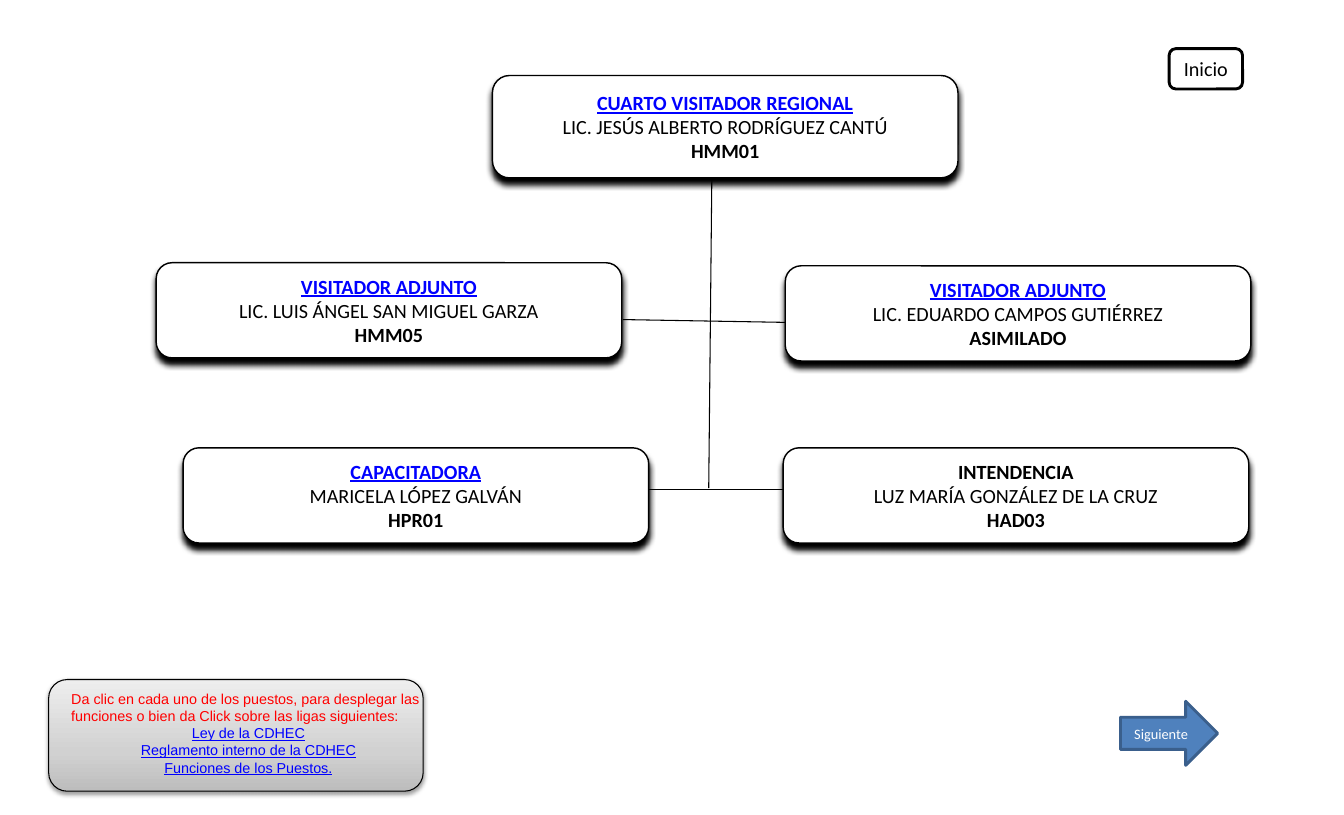
import copy

import pptx
import pptx.dml.color
import pptx.enum.shapes
import pptx.enum.text
import pptx.oxml.ns
import pptx.util
from lxml import etree

Inches = pptx.util.Inches
Pt = pptx.util.Pt
RGBColor = pptx.dml.color.RGBColor
SHAPE = pptx.enum.shapes.MSO_SHAPE
ALIGN = pptx.enum.text.PP_ALIGN
qn = pptx.oxml.ns.qn

BLACK = RGBColor(0x00, 0x00, 0x00)
WHITE = RGBColor(0xFF, 0xFF, 0xFF)
LINK_BLUE = RGBColor(0x00, 0x00, 0xFF)
RED = RGBColor(0xFF, 0x00, 0x00)
ARROW_BLUE = RGBColor(0x4F, 0x81, 0xBD)
ARROW_EDGE = RGBColor(0x3A, 0x5F, 0x8C)
GREYS = [(0, RGBColor(0xBD, 0xBD, 0xBD)),
         (0.35, RGBColor(0xD1, 0xD1, 0xD1)),
         (1, RGBColor(0xEE, 0xEE, 0xEE))]

CARD_WIDTH = 4.5


class OrgChart:
    def __init__(self, slide):
        self.shapes = slide.shapes

    def block(self, preset, left, top, width, height, edge, edge_width, fill=None):
        block = self.shapes.add_shape(
            preset, Inches(left), Inches(top), Inches(width), Inches(height))
        block.shadow.inherit = False
        block.line.color.rgb = edge
        block.line.width = Pt(edge_width)
        if fill is not None:
            block.fill.solid()
            block.fill.fore_color.rgb = fill
        block.text_frame.vertical_anchor = pptx.enum.text.MSO_ANCHOR.MIDDLE
        return block

    def drop_shadow(self, block, blur, distance, opacity):
        """Cast a black shadow straight down; lengths in points, opacity in percent."""
        effects = block._element.spPr.find(qn("a:effectLst"))
        shadow = etree.SubElement(
            effects, qn("a:outerShdw"), blurRad=str(Pt(blur)), dist=str(Pt(distance)),
            dir="5400000", algn="ctr", rotWithShape="0")
        black = etree.SubElement(shadow, qn("a:srgbClr"), val=str(BLACK))
        etree.SubElement(black, qn("a:alpha"), val=str(opacity * 1000))

    def text_line(self, paragraph, words, size, color, font="Calibri",
                  bold=False, underline=False, align=ALIGN.CENTER):
        paragraph.text = words
        paragraph.alignment = align
        paragraph.font.name = font
        paragraph.font.size = Pt(size)
        paragraph.font.color.rgb = color
        paragraph.font.bold = bold
        paragraph.font.underline = underline

    def card(self, left, top, height, post, person, code, linked=True):
        card = self.block(SHAPE.ROUNDED_RECTANGLE, left, top, CARD_WIDTH, height,
                          BLACK, 1, WHITE)
        self.drop_shadow(card, 4, 4, 100)
        frame = card.text_frame
        frame.word_wrap = False
        frame.margin_left = frame.margin_right = Inches(0.17)
        frame.margin_top = frame.margin_bottom = Inches(0.09)
        self.text_line(frame.paragraphs[0], post, 14, LINK_BLUE if linked else BLACK,
                       bold=True, underline=linked)
        self.text_line(frame.add_paragraph(), person, 14, BLACK)
        self.text_line(frame.add_paragraph(), code, 14, BLACK, bold=True)

    def branch(self, x1, y1, x2, y2):
        branch = self.shapes.add_connector(
            pptx.enum.shapes.MSO_CONNECTOR.STRAIGHT,
            Inches(x1), Inches(y1), Inches(x2), Inches(y2))
        branch.line.color.rgb = BLACK
        branch.line.width = Pt(0.75)
        etree.SubElement(branch._element.spPr, qn("a:effectLst"))

    def button(self, preset, left, top, width, height, label, size, color, fill, edge):
        button = self.block(preset, left, top, width, height, edge, 2, fill)
        self.text_line(button.text_frame.paragraphs[0], label, size, color)

    def grey_panel(self, left, top, width, height):
        panel = self.block(SHAPE.ROUNDED_RECTANGLE, left, top, width, height, BLACK, 0.75)
        panel.fill.gradient()
        panel.fill.gradient_angle = 90
        stop_list = panel._element.spPr.find(".//" + qn("a:gsLst"))
        stop_list.append(copy.deepcopy(stop_list[0]))
        for stop, (position, grey) in zip(panel.fill.gradient_stops, GREYS):
            stop.position = position
            stop.color.rgb = grey
        self.drop_shadow(panel, 3.1, 1.6, 38)

    def help_text(self, left, top, width, height, hint, links):
        frame = self.shapes.add_textbox(
            Inches(left), Inches(top), Inches(width), Inches(height)).text_frame
        frame.word_wrap = True
        self.text_line(frame.paragraphs[0], hint, 10, RED, "Arial", align=ALIGN.LEFT)
        for link in links:
            self.text_line(frame.add_paragraph(), link, 10, LINK_BLUE, "Arial",
                           underline=True)


def main():
    deck = pptx.Presentation()
    deck.slide_width = Inches(12.99)
    deck.slide_height = Inches(7.88)
    chart = OrgChart(deck.slides.add_slide(deck.slide_layouts[6]))

    for ends in [(6.88, 1.73, 6.85, 4.72),
                 (6.02, 3.09, 7.75, 3.12),
                 (5.79, 4.73, 8.09, 4.73)]:
        chart.branch(*ends)

    chart.card(4.76, 0.73, 0.99, "CUARTO VISITADOR REGIONAL",
               "LIC. JESÚS ALBERTO RODRÍGUEZ CANTÚ", "HMM01")
    chart.card(1.51, 2.54, 0.92, "VISITADOR ADJUNTO",
               "LIC. LUIS ÁNGEL SAN MIGUEL GARZA", "HMM05")
    chart.card(7.59, 2.57, 0.92, "VISITADOR ADJUNTO",
               "LIC. EDUARDO CAMPOS GUTIÉRREZ", "ASIMILADO")
    chart.card(1.77, 4.33, 0.92, "CAPACITADORA", "MARICELA LÓPEZ GALVÁN", "HPR01")
    chart.card(7.57, 4.33, 0.92, "INTENDENCIA",
               "LUZ MARÍA GONZÁLEZ DE LA CRUZ", "HAD03", linked=False)

    chart.button(SHAPE.ROUNDED_RECTANGLE, 11.3, 0.47, 0.71, 0.39,
                 "Inicio", 14, BLACK, WHITE, BLACK)
    chart.grey_panel(0.47, 6.57, 3.62, 1.08)
    chart.help_text(
        0.59, 6.62, 3.62, 0.94,
        "Da clic en cada uno de los puestos, para desplegar las funciones "
        "o bien da Click sobre las ligas siguientes:",
        ["Ley de la CDHEC", "Reglamento interno de la CDHEC", "Funciones de los Puestos."])
    chart.button(SHAPE.RIGHT_ARROW, 10.83, 6.78, 0.94, 0.62,
                 "Siguiente", 10, WHITE, ARROW_BLUE, ARROW_EDGE)

    deck.save("out.pptx")


if __name__ == "__main__":
    main()
